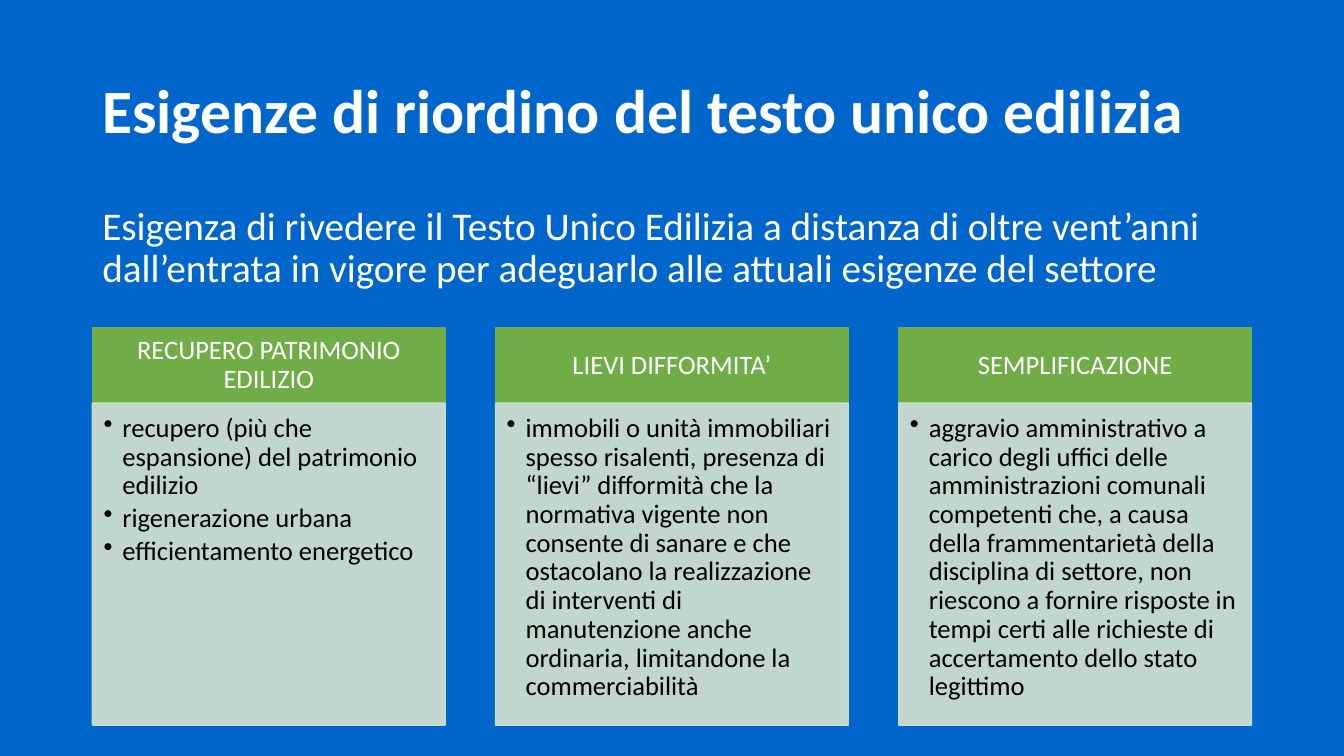
from dataclasses import dataclass

import pptx
import pptx.dml.color
import pptx.enum.shapes
import pptx.enum.text
import pptx.oxml
import pptx.oxml.ns
import pptx.util

Pt = pptx.util.Pt
RGB = pptx.dml.color.RGBColor.from_string
ALIGN = pptx.enum.text.PP_ALIGN
ANCHOR = pptx.enum.text.MSO_ANCHOR
qn = pptx.oxml.ns.qn


@dataclass(frozen=True)
class Theme:
    """Colours and type of the slide."""
    font: str = "Calibri"
    background: str = "0066CC"
    light: str = "FFFFFF"
    dark: str = "000000"
    heading_fill: str = "70AD47"
    detail_fill: str = "D5E3CF"
    detail_opacity: int = 90
    title_size: int = 44
    intro_size: int = 28
    column_size: int = 19


THEME = Theme()

COLUMNS = [
    ("RECUPERO PATRIMONIO EDILIZIO", [
        "recupero (più che espansione) del patrimonio edilizio",
        "rigenerazione urbana",
        "efficientamento energetico",
    ]),
    ("LIEVI DIFFORMITA’", [
        "immobili o unità immobiliari spesso risalenti, presenza di “lievi” "
        "difformità che la normativa vigente non consente di sanare e che "
        "ostacolano la realizzazione di interventi di manutenzione anche "
        "ordinaria, limitandone la commerciabilità",
    ]),
    ("SEMPLIFICAZIONE", [
        "aggravio amministrativo a carico degli uffici delle amministrazioni "
        "comunali competenti che, a causa della frammentarietà della "
        "disciplina di settore, non riescono a fornire risposte in tempi certi "
        "alle richieste di accertamento dello stato legittimo",
    ]),
]


def write(holder, lines, size, color, insets, anchor=ANCHOR.TOP,
          align=ALIGN.LEFT, bold=False, before=0, after=0):
    """Fill a text frame with equally formatted paragraphs."""
    frame = holder.text_frame
    frame.word_wrap = True
    frame.vertical_anchor = anchor
    (frame.margin_left, frame.margin_top,
     frame.margin_right, frame.margin_bottom) = map(Pt, insets)
    frame.text = "\n".join(lines)
    for paragraph in frame.paragraphs:
        paragraph.alignment = align
        paragraph.line_spacing = 0.9
        paragraph.space_before = Pt(before)
        paragraph.space_after = Pt(after)
        for run in paragraph.runs:
            run.font.name = THEME.font
            run.font.size = Pt(size)
            run.font.bold = bold
            run.font.color.rgb = RGB(color)
    return frame


def add_bullets(frame, indent):
    """Give every paragraph a hanging bullet."""
    for paragraph in frame.paragraphs:
        properties = paragraph._p.get_or_add_pPr()
        properties.set("marL", str(Pt(indent)))
        properties.set("indent", str(-Pt(indent)))
        bullet = pptx.oxml.parse_xml(
            f'<a:buChar {pptx.oxml.ns.nsdecls("a")} char="•"/>')
        properties.append(bullet)


def add_panel(slide, box, color, opacity=100):
    """Draw a plain rectangle with a matching outline."""
    panel = slide.shapes.add_shape(
        pptx.enum.shapes.MSO_SHAPE.RECTANGLE, *map(Pt, box))
    panel.shadow.inherit = False
    panel.fill.solid()
    panel.fill.fore_color.rgb = RGB(color)
    panel.line.color.rgb = RGB(color)
    panel.line.width = Pt(1)
    if opacity < 100:
        for tint in panel._element.spPr.iter(qn("a:srgbClr")):
            alpha = tint.makeelement(qn("a:alpha"), {"val": str(opacity * 1000)})
            tint.append(alpha)
    return panel


def add_title(slide, box, text):
    """Place the slide title."""
    title = slide.shapes.add_textbox(*map(Pt, box))
    write(title, [text], THEME.title_size, THEME.light, (7.2, 3.6, 7.2, 3.6),
          anchor=ANCHOR.MIDDLE, bold=True)


def add_intro(slide, box, text):
    """Place the introductory sentence."""
    intro = slide.shapes.add_textbox(*map(Pt, box))
    write(intro, [text], THEME.intro_size, THEME.light, (7.2, 3.6, 7.2, 3.6),
          before=10)


def add_column(slide, box, heading, points):
    """Stack a heading panel above its bulleted detail panel."""
    left, top, width, height = box
    heading_height = 54
    heading_panel = add_panel(
        slide, (left, top, width, heading_height), THEME.heading_fill)
    write(heading_panel, [heading], THEME.column_size, THEME.light,
          (10.8, 5.8, 10.8, 5.8), anchor=ANCHOR.MIDDLE, align=ALIGN.CENTER)
    detail_panel = add_panel(
        slide, (left, top + heading_height, width, height - heading_height),
        THEME.detail_fill, THEME.detail_opacity)
    details = write(detail_panel, points, THEME.column_size, THEME.dark,
                    (8, 8, 10.8, 12.2), after=2.85)
    add_bullets(details, 13.5)


def add_columns(slide, box, columns):
    """Spread the columns evenly across the box."""
    left, top, width, height = box
    column_width = 252
    step = (width - column_width) / (len(columns) - 1)
    for index, (heading, points) in enumerate(columns):
        add_column(slide, (left + index * step, top, column_width, height),
                   heading, points)


def main():
    """Build and save the slide."""
    deck = pptx.Presentation()
    deck.slide_width, deck.slide_height = Pt(960), Pt(540)
    slide = deck.slides.add_slide(deck.slide_layouts[6])
    slide.background.fill.solid()
    slide.background.fill.fore_color.rgb = RGB(THEME.background)
    left, width = 66, 828
    add_title(slide, (left, 28.75, width, 104.4),
              "Esigenze di riordino del testo unico edilizia")
    add_intro(slide, (left, 144, width, 111.6),
              "Esigenza di rivedere il Testo Unico Edilizia a distanza di oltre "
              "vent’anni dall’entrata in vigore per adeguarlo alle attuali "
              "esigenze del settore")
    add_columns(slide, (left, 234, width, 284), COLUMNS)
    deck.save("out.pptx")


if __name__ == "__main__":
    main()
